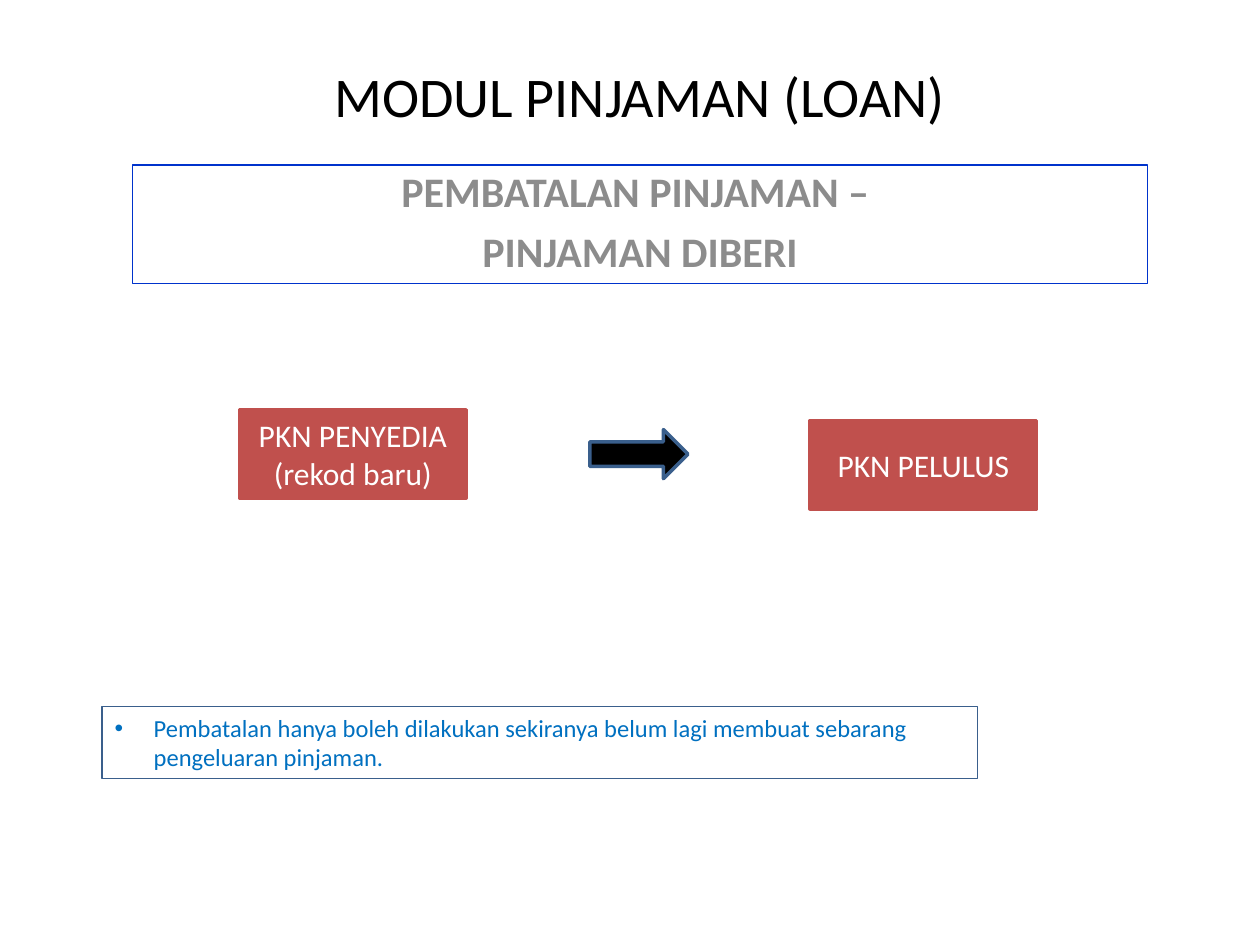
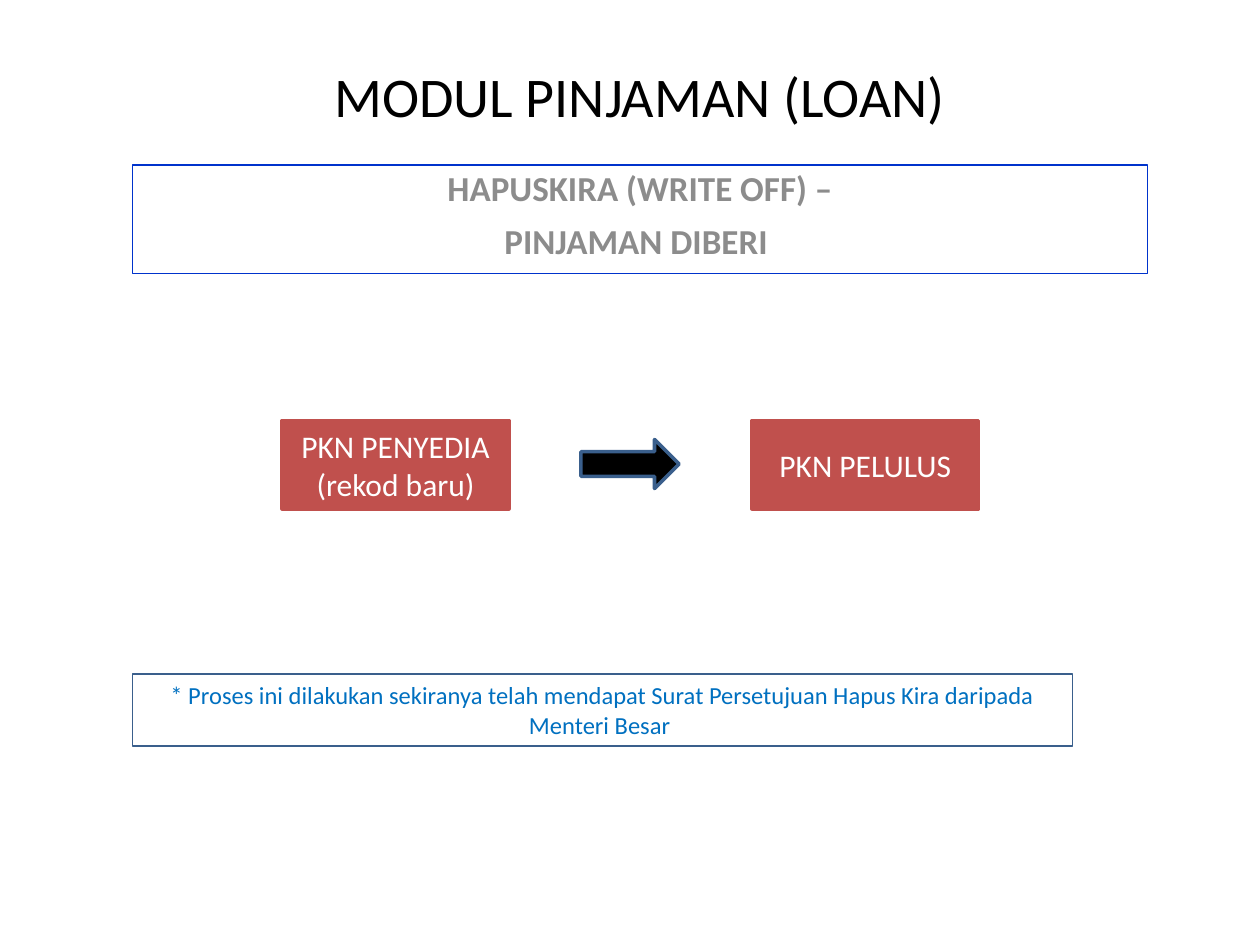
from dataclasses import dataclass

from lxml.etree import SubElement
from pptx import Presentation
from pptx.dml.color import RGBColor
from pptx.enum.shapes import MSO_SHAPE
from pptx.enum.text import MSO_ANCHOR, MSO_AUTO_SIZE, PP_ALIGN
from pptx.oxml.ns import qn
from pptx.shapes.autoshape import Shape
from pptx.slide import Slide
from pptx.util import Cm, Pt

FONT = "Calibri"
TITLE = "MODUL PINJAMAN (LOAN)"
COLOURS = {
    "title": "000000",
    "heading": "8C8C8C",
    "heading_line": "0033CC",
    "step": "C0504D",
    "step_text": "FFFFFF",
    "arrow": "000000",
    "outline": "3A5F8C",
    "note": "0070C0",
}
STEP_SIZE = (4.57, 1.78)
ARROW_SIZE = (1.98, 0.99)
NOTE_HEIGHT = 1.45
HANGING_INDENT = Cm(0.79)


@dataclass(frozen=True)
class Box:
    left: float
    top: float
    width: float
    height: float


@dataclass(frozen=True)
class TextStyle:
    size: float
    colour: str
    bold: bool = False
    alignment: PP_ALIGN = PP_ALIGN.CENTER
    anchor: MSO_ANCHOR = MSO_ANCHOR.TOP


@dataclass(frozen=True)
class Step:
    lines: tuple[str, ...]
    left: float
    top: float


@dataclass(frozen=True)
class Note:
    text: str
    box: Box
    bulleted: bool = False


@dataclass(frozen=True)
class LoanProcess:
    heading: tuple[str, ...]
    heading_size: float
    heading_height: float
    heading_gap: float
    steps: tuple[Step, ...]
    arrow: tuple[float, float]
    note: Note


PREPARER = ("PKN PENYEDIA", "(rekod baru)")
APPROVER = ("PKN PELULUS",)

PROCESSES = (
    LoanProcess(
        heading=("PEMBATALAN PINJAMAN – ", "PINJAMAN DIBERI"),
        heading_size=24,
        heading_height=2.39,
        heading_gap=4.8,
        steps=(Step(PREPARER, 4.83, 8.26), Step(APPROVER, 16.33, 8.48)),
        arrow=(11.89, 8.66),
        note=Note(
            "Pembatalan hanya boleh dilakukan sekiranya belum lagi membuat "
            "sebarang pengeluaran pinjaman.",
            Box(2.06, 14.25, 17.65, NOTE_HEIGHT),
            bulleted=True,
        ),
    ),
    LoanProcess(
        heading=("HAPUSKIRA (WRITE OFF) –", "PINJAMAN DIBERI "),
        heading_size=20,
        heading_height=2.18,
        heading_gap=6,
        steps=(Step(PREPARER, 5.69, 8.48), Step(APPROVER, 15.16, 8.48)),
        arrow=(11.71, 8.86),
        note=Note(
            "* Proses ini dilakukan sekiranya telah mendapat Surat Persetujuan "
            "Hapus Kira daripada Menteri Besar ",
            Box(2.67, 13.59, 18.95, NOTE_HEIGHT),
        ),
    ),
)


def colour(name: str) -> RGBColor:
    return RGBColor.from_string(COLOURS[name])


def apply_format(target: object, values: dict) -> None:
    for name, value in values.items():
        setattr(target, name, value)


def write_text(shape: Shape, lines: tuple[str, ...], style: TextStyle) -> None:
    frame = shape.text_frame
    frame.text = "\n".join(lines)
    apply_format(frame, {
        "word_wrap": True,
        "auto_size": MSO_AUTO_SIZE.NONE,
        "vertical_anchor": style.anchor,
    })
    for paragraph in frame.paragraphs:
        paragraph.alignment = style.alignment
        for run in paragraph.runs:
            apply_format(run.font, {
                "name": FONT, "size": Pt(style.size), "bold": style.bold,
            })
            run.font.color.rgb = colour(style.colour)


def add_box(slide: Slide, box: Box, line: str, line_width: float,
            fill: str | None = None,
            kind: MSO_SHAPE = MSO_SHAPE.RECTANGLE) -> Shape:
    shape = slide.shapes.add_shape(
        kind, Cm(box.left), Cm(box.top), Cm(box.width), Cm(box.height))
    shape.shadow.inherit = False
    shape.line.color.rgb = colour(line)
    shape.line.width = Pt(line_width)
    if fill is None:
        shape.fill.background()
    else:
        shape.fill.solid()
        shape.fill.fore_color.rgb = colour(fill)
    return shape


def place_title(slide: Slide) -> None:
    title = slide.shapes.title
    apply_format(title, {
        "left": Cm(4.9), "top": Cm(1.12), "width": Cm(16), "height": Cm(1.63),
    })
    write_text(title, (TITLE,), TextStyle(32, "title"))


def add_heading(slide: Slide, process: LoanProcess) -> None:
    box = Box(2.67, 3.33, 20.47, process.heading_height)
    shape = add_box(slide, box, "heading_line", 0.75)
    write_text(shape, process.heading,
               TextStyle(process.heading_size, "heading", bold=True))
    first, second = shape.text_frame.paragraphs
    first.line_spacing = 0.9
    second.space_before = Pt(process.heading_gap)


def add_step(slide: Slide, step: Step) -> None:
    shape = add_box(slide, Box(step.left, step.top, *STEP_SIZE),
                    "step", 2, "step")
    write_text(shape, step.lines,
               TextStyle(18, "step_text", anchor=MSO_ANCHOR.MIDDLE))


def add_note(slide: Slide, note: Note) -> None:
    shape = add_box(slide, note.box, "outline", 0.75)
    alignment = PP_ALIGN.LEFT if note.bulleted else PP_ALIGN.CENTER
    write_text(shape, (note.text,), TextStyle(14, "note", alignment=alignment))
    if note.bulleted:
        properties = shape.text_frame.paragraphs[0]._p.get_or_add_pPr()
        properties.set("marL", str(HANGING_INDENT))
        properties.set("indent", str(-HANGING_INDENT))
        SubElement(properties, qn("a:buFont")).set("typeface", "Arial")
        SubElement(properties, qn("a:buChar")).set("char", "•")


def add_process(presentation: Presentation, process: LoanProcess) -> None:
    slide = presentation.slides.add_slide(presentation.slide_layouts[5])
    place_title(slide)
    add_heading(slide, process)
    for step in process.steps:
        add_step(slide, step)
    add_box(slide, Box(*process.arrow, *ARROW_SIZE), "outline", 2,
            "arrow", MSO_SHAPE.RIGHT_ARROW)
    add_note(slide, process.note)


def main() -> None:
    presentation = Presentation()
    apply_format(presentation, {
        "slide_width": Cm(25.4), "slide_height": Cm(19.05),
    })
    for process in PROCESSES:
        add_process(presentation, process)
    presentation.save("out.pptx")


if __name__ == "__main__":
    main()
